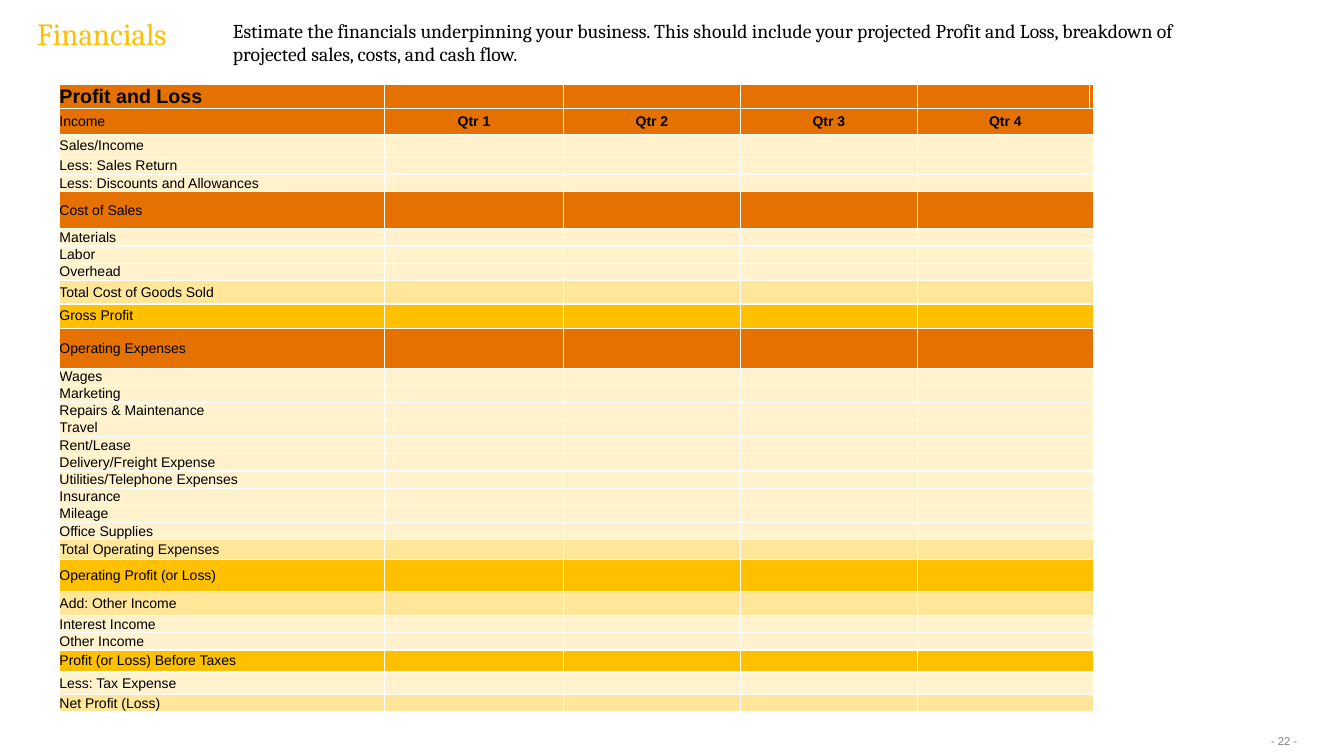
from dataclasses import dataclass

from lxml.etree import SubElement
from pptx import Presentation
from pptx.dml.color import RGBColor
from pptx.enum.text import MSO_ANCHOR, PP_ALIGN
from pptx.oxml import parse_xml
from pptx.oxml.ns import nsdecls, qn
from pptx.util import Pt


@dataclass(frozen=True)
class Theme:
    """Colours, fonts and type sizes of the slide."""
    serif: str = "Cambria"
    sans: str = "Arial"
    black: str = "000000"
    gray: str = "7F7F7F"
    white: str = "FFFFFF"
    gold: str = "FFC000"
    head: str = "E57200"
    total: str = "FFE699"
    pale: str = "FFF2CC"
    title: int = 22
    lead: int = 14
    body: int = 10
    small: int = 8


class Page:
    """Draws styled elements on one slide."""

    def __init__(self, slide, theme):
        self.slide = slide
        self.theme = theme

    def style(self, para, size, face, color, bold=False, align=PP_ALIGN.LEFT):
        """Format the runs of a paragraph."""
        para.alignment = align
        for run in para.runs:
            font = run.font
            font.size, font.name, font.bold = Pt(size), face, bold
            font.color.rgb = RGBColor.from_string(color)

    def text(self, words, box, size, face, color, inset=(0, 0),
             align=PP_ALIGN.LEFT, anchor=MSO_ANCHOR.TOP, space=None):
        """Add a wrapped text box."""
        frame = self.slide.shapes.add_textbox(*map(Pt, box)).text_frame
        frame.word_wrap = True
        frame.vertical_anchor = anchor
        frame.margin_left = frame.margin_right = Pt(inset[0])
        frame.margin_top = frame.margin_bottom = Pt(inset[1])
        frame.text = words
        para = frame.paragraphs[0]
        para.line_spacing = space
        self.style(para, size, face, color, align=align)

    def cell(self, cell, words, fill, size, bold, align):
        """Fill, border and label one table cell."""
        cell.margin_left = cell.margin_right = 0
        cell.margin_top = cell.margin_bottom = 0
        cell.vertical_anchor = MSO_ANCHOR.MIDDLE
        props = cell._tc.get_or_add_tcPr()
        for side in "LRTB":
            props.append(parse_xml(
                f'<a:ln{side} {nsdecls("a")} w="12700"><a:solidFill>'
                f'<a:srgbClr val="{self.theme.white}"/></a:solidFill></a:ln{side}>'))
        cell.fill.solid()
        cell.fill.fore_color.rgb = RGBColor.from_string(fill)
        frame = cell.text_frame
        if words:
            frame.text = words
            self.style(frame.paragraphs[0], size, self.theme.sans,
                       self.theme.black, bold, align)
        else:
            SubElement(frame.paragraphs[0]._p, qn("a:endParaRPr"),
                       sz=str(self.theme.body * 100))

    def table(self, left, top, widths, rows, heads):
        """Add the statement, one label and fill for each row."""
        box = left, top, sum(widths), sum(row[2] for row in rows)
        grid = self.slide.shapes.add_table(
            len(rows), len(widths), *map(Pt, box)).table
        grid.first_row = grid.horz_banding = False
        for col, width in zip(grid.columns, widths):
            col.width = Pt(width)
        last = len(widths) - 1
        for i, (label, fill, height) in enumerate(rows):
            grid.rows[i].height = Pt(height)
            size = self.theme.lead if i == 0 else self.theme.body
            for j in range(len(widths)):
                words = label if j == 0 else ""
                if i == 1 and 0 < j < last:
                    words = heads[j - 1]
                bold = i == 0 or (i == 1 and j > 0)
                align = PP_ALIGN.CENTER if j else PP_ALIGN.LEFT
                self.cell(grid.cell(i, j), words, fill, size, bold, align)
            if i:
                grid.cell(i, last - 1).merge(grid.cell(i, last))


def main():
    """Build and save the slide."""
    deck = Presentation()
    deck.slide_width, deck.slide_height = Pt(960), Pt(540)
    look = Theme()
    page = Page(deck.slides.add_slide(deck.slide_layouts[6]), look)

    page.text("Estimate the financials underpinning your business. This should "
              "include your projected Profit and Loss, breakdown of projected "
              "sales, costs, and cash flow.",
              (166.4, 13.5, 718, 64), look.lead, look.serif, look.black)
    page.text("Financials", (26.6, 13.7, 907, 24), look.title, look.serif,
              look.gold, space=0.9)
    page.text("- 22 -", (882.7, 524.2, 51, 10.8), look.small, look.sans,
              look.gray, (7.2, 3.6), PP_ALIGN.RIGHT, MSO_ANCHOR.MIDDLE)

    line = 12.3
    rows = [
        ("Profit and Loss", look.head, 17.1),
        ("Income", look.head, 18.4),
        ("Sales/Income", look.pale, 16.5),
        ("Less: Sales Return", look.pale, line),
        ("Less: Discounts and Allowances", look.pale, line),
        ("Cost of Sales", look.head, 26.5),
        ("Materials", look.pale, line),
        ("Labor", look.pale, line),
        ("Overhead", look.pale, line),
        ("Total Cost of Goods Sold", look.total, 16.8),
        ("Gross Profit", look.gold, 17.4),
        ("Operating Expenses", look.head, 28.6),
        ("Wages", look.pale, line),
        ("Marketing", look.pale, 11.5),
        ("Repairs & Maintenance", look.pale, line),
        ("Travel", look.pale, line),
        ("Rent/Lease", look.pale, line),
        ("Delivery/Freight Expense", look.pale, line),
        ("Utilities/Telephone Expenses", look.pale, line),
        ("Insurance", look.pale, line),
        ("Mileage", look.pale, line),
        ("Office Supplies", look.pale, line),
        ("Total Operating Expenses", look.total, 14.2),
        ("Operating Profit (or Loss)", look.gold, 22.9),
        ("Add: Other Income", look.total, 17.1),
        ("Interest Income", look.pale, line),
        ("Other Income", look.pale, line),
        ("Profit (or Loss) Before Taxes", look.gold, 15.7),
        ("Less: Tax Expense", look.pale, 16.4),
        ("Net Profit (Loss)", look.total, line),
    ]
    heads = [f"Qtr {n}" for n in range(1, 5)]
    page.table(42.5, 60.5, (232.2, 127.8, 126.4, 126.4, 122.9, 2.8), rows, heads)
    deck.save("out.pptx")


if __name__ == "__main__":
    main()
